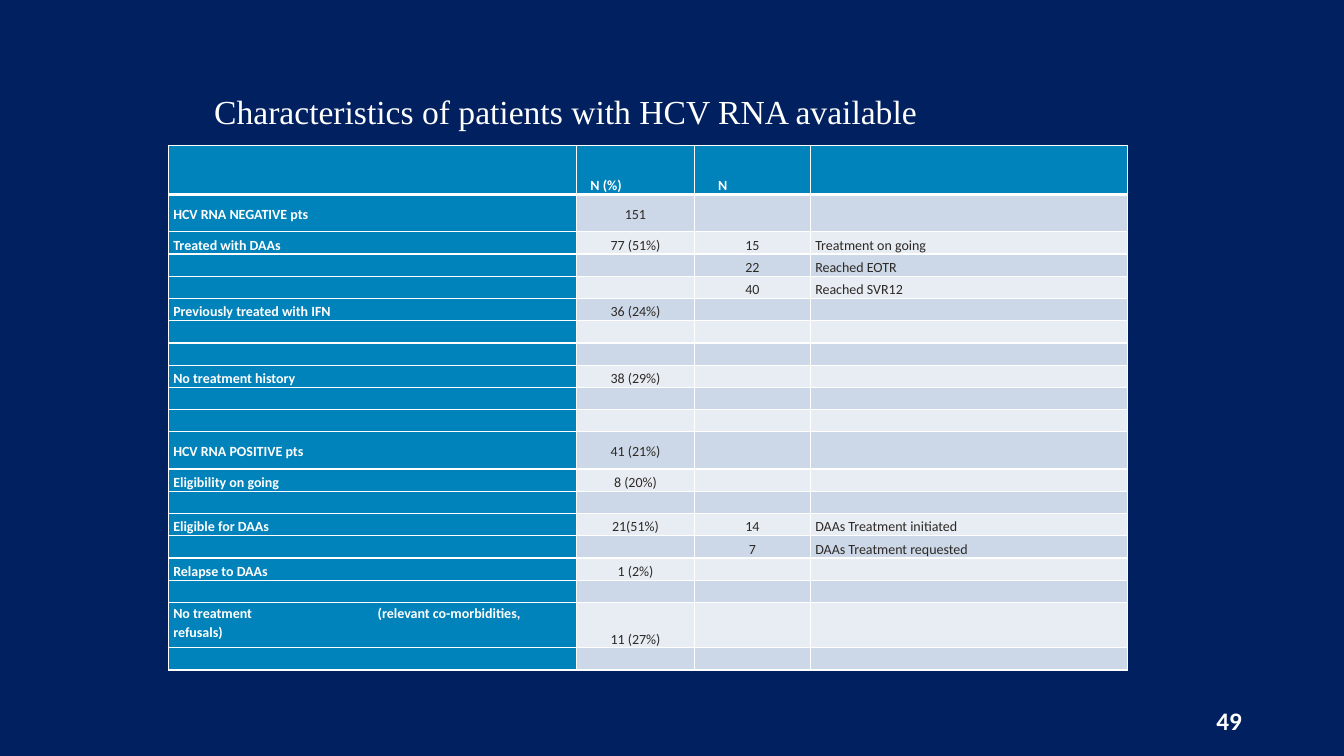
"""Build the slide on patients with HCV RNA available."""
from lxml import etree
from pptx import Presentation
from pptx import util as u
from pptx.dml import color
from pptx.enum import text
from pptx.oxml import ns


def paint(fill, hex_color):
    fill.solid()
    fill.fore_color.rgb = color.RGBColor.from_string(hex_color)


def write(paragraph, words, hex_color, formats):
    run = paragraph.add_run()
    run.text = words
    for name, value in formats.items():
        setattr(run.font, name, value)
    paint(run.font.fill, hex_color)


WHITE, NAVY, BLUE, INK = "FFFFFF", "002060", "0082BA", "2D2926"
BANDS = ["E7EDF3", "CCD8E7"]
LEFT, CENTER, RIGHT = text.PP_ALIGN.LEFT, text.PP_ALIGN.CENTER, text.PP_ALIGN.RIGHT
TOP, MIDDLE, BOTTOM = text.MSO_ANCHOR.TOP, text.MSO_ANCHOR.MIDDLE, text.MSO_ANCHOR.BOTTOM

presentation = Presentation()
presentation.slide_width, presentation.slide_height = u.Pt(960), u.Pt(540)
slide = presentation.slides.add_slide(presentation.slide_layouts[5])
paint(slide.background.fill, NAVY)

title = slide.shapes.title
title.left, title.top, title.width, title.height = u.Pt(145.8), u.Pt(61.2), u.Pt(800), u.Pt(36)
title.text_frame.vertical_anchor = MIDDLE
title_paragraph = title.text_frame.paragraphs[0]
title_paragraph.alignment = LEFT
write(title_paragraph, "Characteristics of patients with HCV RNA available", WHITE,
      {"name": "Times New Roman", "size": u.Pt(24), "bold": False})

rows = [
    ["", "N (%)", "N", ""],
    ["HCV RNA NEGATIVE pts", "151", "", ""],
    ["Treated with DAAs", "77 (51%)", "15", "Treatment on going"],
    ["", "", "22", "Reached EOTR"],
    ["", "", "40", "Reached SVR12"],
    ["Previously treated with IFN", "36 (24%)", "", ""],
    [""] * 4,
    [""] * 4,
    ["No treatment history", "38 (29%)", "", ""],
    [""] * 4,
    [""] * 4,
    ["HCV RNA POSITIVE pts", "41 (21%)", "", ""],
    ["Eligibility on going", "8 (20%)", "", ""],
    [""] * 4,
    ["Eligible for DAAs", "21(51%)", "14", "DAAs Treatment initiated"],
    ["", "", "7", "DAAs Treatment requested"],
    ["Relapse to DAAs", "1 (2%)", "", ""],
    [""] * 4,
    ["No treatment\t(relevant co-morbidities, refusals)", "11 (27%)", "", ""],
    [""] * 4,
]
column_widths = [291.6, 84.2, 82.8, 226.8]
special_heights = {0: 35.3, 1: 26.6, 11: 26.6, 18: 32.4}
heights = [special_heights.get(index, 15.9) for index in range(len(rows))]
header_indents = {1: 10, 2: 17}
group_rows, refusal_row = (1, 11), 18

table = slide.shapes.add_table(len(rows), 4, u.Pt(120.2), u.Pt(103.7),
                               u.Pt(sum(column_widths)), u.Pt(sum(heights))).table
for column, width in zip(table.columns, column_widths):
    column.width = u.Pt(width)

for row_index, values in enumerate(rows):
    table.rows[row_index].height = u.Pt(heights[row_index])
    is_header = row_index == 0
    for column_index, words in enumerate(values):
        cell = table.cell(row_index, column_index)
        is_label = is_header or column_index == 0
        indent = header_indents.get(column_index, 3.6) if is_header else 3.6
        layout = {
            "margin_left": u.Pt(indent),
            "margin_right": u.Pt(8 if column_index == 0 else 3.6),
            "margin_top": 0,
            "margin_bottom": 0,
            "vertical_anchor": MIDDLE if row_index in group_rows else BOTTOM,
        }
        if row_index == refusal_row and column_index == 0:
            layout["vertical_anchor"] = TOP
        for name, value in layout.items():
            setattr(cell, name, value)

        properties = cell._tc.get_or_add_tcPr()
        for side in ("L", "R", "T", "B"):
            thick = (row_index, side) in ((0, "B"), (1, "T"))
            border = etree.SubElement(properties, ns.qn(f"a:ln{side}"),
                                      w=str(u.Pt(3 if thick else 1)))
            border_fill = etree.SubElement(border, ns.qn("a:solidFill"))
            etree.SubElement(border_fill, ns.qn("a:srgbClr"), val=WHITE)
        paint(cell.fill, BLUE if is_label else BANDS[row_index % 2])

        paragraph = cell.text_frame.paragraphs[0]
        paragraph.line_spacing = 1.15
        paragraph.alignment = CENTER if column_index in (1, 2) and not is_header else LEFT
        if "\t" in words:
            tabs = etree.SubElement(paragraph._p.get_or_add_pPr(), ns.qn("a:tabLst"))
            etree.SubElement(tabs, ns.qn("a:tab"), pos=str(u.Pt(146)), algn="l")
        if words:
            write(paragraph, words, WHITE if is_label else INK,
                  {"name": "Calibri", "size": u.Pt(10), "bold": is_label})
        else:
            etree.SubElement(paragraph._p, ns.qn("a:endParaRPr"), sz="1000")

page_number = slide.shapes.add_textbox(u.Pt(678.2), u.Pt(500.4), u.Pt(216), u.Pt(28.8))
page_number.text_frame.word_wrap = True
number_paragraph = page_number.text_frame.paragraphs[0]
number_paragraph.alignment = RIGHT
write(number_paragraph, "49", WHITE, {"name": "Calibri", "size": u.Pt(18), "bold": True})

presentation.save("out.pptx")
